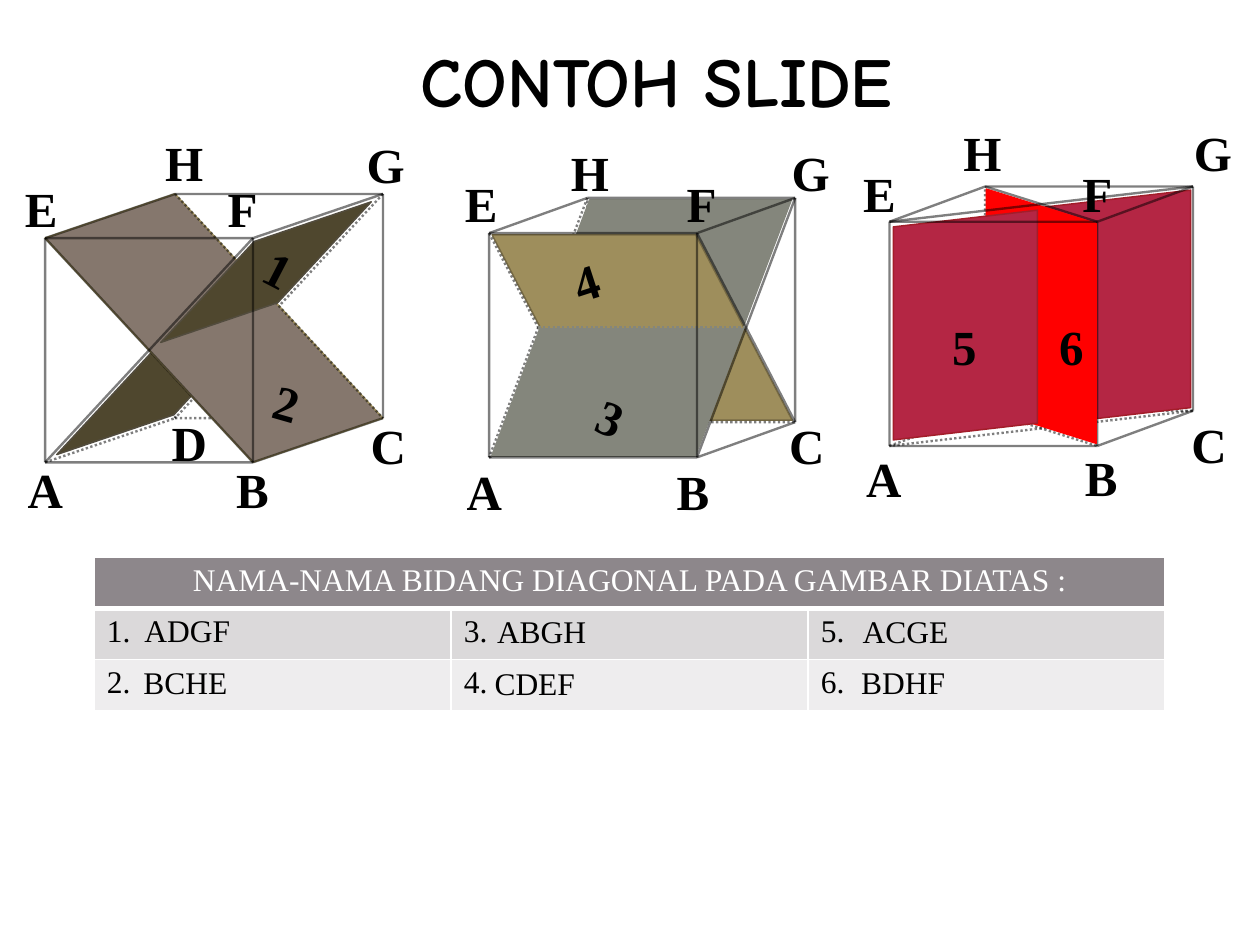
import pptx
import pptx.dml.color
import pptx.enum.dml
import pptx.enum.text
import pptx.oxml
import pptx.oxml.ns
import pptx.util
from pptx.util import Cm

SERIF = "Times New Roman"
FRONT_W, FRONT_H = 4.19, 4.52


def rgb(value):
    """Return the colour of a hex string."""
    return pptx.dml.color.RGBColor.from_string(value)


def style(p, size, color="000000", font=SERIF, bold=False, center=False):
    """Set the font and alignment of a paragraph."""
    p.font.name, p.font.size, p.font.bold = font, pptx.util.Pt(size), bold
    p.font.color.rgb = rgb(color)
    if center:
        p.alignment = pptx.enum.text.PP_ALIGN.CENTER


def text(s, box, words, size, wrap=True, **kw):
    """Add a text box of one paragraph."""
    sp = s.shapes.add_textbox(*map(Cm, box))
    tf = sp.text_frame
    tf.word_wrap = wrap
    tf.text = words
    style(tf.paragraphs[0], size, **kw)
    return sp


def label(s, x, y, words, turn=0):
    """Add a bold letter or number centred on a point."""
    sp = text(s, (x - 0.55, y - 0.66, 1.1, 1.32), words, 28, wrap=False,
              bold=True, center=True)
    sp.rotation = turn


def edge(s, points, name, color=None):
    """Join two named points; a final dot in the name makes the line dotted."""
    ends = [Cm(v) for key in name[:2] for v in points[key]]
    sp = s.shapes.add_connector(pptx.enum.shapes.MSO_CONNECTOR.STRAIGHT, *ends)
    sp.line.width = pptx.util.Pt(1.35)
    sp.line.color.rgb = rgb(color or "000000")
    if name.endswith("."):
        sp.line.dash_style = pptx.enum.dml.MSO_LINE.ROUND_DOT
    pr = sp._element.spPr
    if color is None:
        clr = pr.find(".//" + pptx.oxml.ns.qn("a:srgbClr"))
        clr.append(pptx.oxml.parse_xml(
            f'<a:alpha {pptx.oxml.ns.nsdecls("a")} val="50000"/>'))
    pr.append(pptx.oxml.parse_xml(f'<a:effectLst {pptx.oxml.ns.nsdecls("a")}/>'))


def plane(s, points, name, fill, line, scale):
    """Fill the polygon of named points, shrunk towards its centre."""
    corners = [points[key] for key in name]
    cx, cy = (sum(axis) / len(corners) for axis in zip(*corners))
    dots = [(Cm(cx + (x - cx) * scale), Cm(cy + (y - cy) * scale)) for x, y in corners]
    builder = s.shapes.build_freeform(*dots[0], scale=1.0)
    builder.add_line_segments(dots[1:], close=True)
    sp = builder.convert_to_shape()
    sp.shadow.inherit = False
    sp.fill.solid()
    sp.fill.fore_color.rgb = rgb(fill)
    sp.line.color.rgb = rgb(line)
    sp.line.width = pptx.util.Pt(0.85)


def cube(s, box, centres, parts, letters, numbers):
    """Draw a cube ABCD.EFGH in its box, parts listed from back to front."""
    left, top, w, h = box
    dx, dy = w - FRONT_W, h - FRONT_H
    points = {}
    for front, back, x, y in (("A", "D", 0, 1), ("B", "C", 1, 1),
                              ("E", "H", 0, 0), ("F", "G", 1, 0)):
        px, py = left + x * FRONT_W, top + dy + y * FRONT_H
        points[front], points[back] = (px, py), (px + dx, py - dy)
    for key, (a, b) in centres.items():
        points[key] = tuple((m + n) / 2 for m, n in zip(points[a], points[b]))
    for part in parts:
        if isinstance(part, str):
            edge(s, points, part)
        elif len(part) == 2:
            edge(s, points, *part)
        else:
            plane(s, points, *part)
    for key, (x, y) in letters.items():
        label(s, points[key][0] + x, points[key][1] + y, key)
    for words, x, y, turn in numbers:
        label(s, left + x, top + y, words, turn)


def border(cell, side, width):
    """Draw one white border of a table cell."""
    cell._tc.get_or_add_tcPr().append(pptx.oxml.parse_xml(
        f'<a:ln{side} {pptx.oxml.ns.nsdecls("a")} w="{int(pptx.util.Pt(width))}">'
        f'<a:solidFill><a:srgbClr val="FFFFFF"/></a:solidFill></a:ln{side}>'))


def answers(s, box):
    """Add the table of plane names and the answers over it."""
    left, top, w, h = box
    rows = [["NAMA-NAMA BIDANG DIAGONAL PADA GAMBAR DIATAS :", "", ""],
            ["1.  ADGF", "3.", "5."], ["2.", "4.", "6."]]
    fills = ["8D878B", "DBD9DA", "EEEDEE"]
    table = s.shapes.add_table(3, 3, *map(Cm, box)).table
    for i, row in enumerate(rows):
        table.rows[i].height = Cm(h / 3)
        for j, words in enumerate(row):
            table.columns[j].width = Cm(w / 3)
            cell = table.cell(i, j)
            cell.text = words
            style(cell.text_frame.paragraphs[0], 18,
                  "000000" if i else "FFFFFF", center=not i)
            for side in "LRTB":
                border(cell, side, 3 if (i, side) in ((0, "B"), (1, "T")) else 1)
            cell.fill.solid()
            cell.fill.fore_color.rgb = rgb(fills[i])
    table.cell(0, 0).merge(table.cell(0, 2))
    for words, x, y in (("BCHE", 0.74, 2.01), ("ABGH", 7.87, 0.99), ("CDEF", 7.82, 2.03),
                        ("ACGE", 15.24, 0.99), ("BDHF", 15.21, 2.01)):
        text(s, (left + x, top + y, 4.88, 1.02), words, 18)


def main():
    """Build the slide and save it."""
    prs = pptx.Presentation()
    prs.slide_width, prs.slide_height = Cm(25.4), Cm(19.05)
    s = prs.slides.add_slide(prs.slide_layouts[6])
    text(s, (4.45, 0.64, 17.58, 1.96), "CONTOH SLIDE", 40, font="Comic Neue",
         bold=True, center=True)
    answers(s, (1.9, 11.23, 21.59, 3.1))

    olive, grey, ruby = ("4F472E", "524C3E"), ("84867C", "84867C"), ("B42644", "A31D2A")
    cube(s, (0.91, 3.91, 6.81, 5.41), {"P": "AF", "Q": "DG"},
         ["DH.", "DC.", ("APQD", *olive, 0.9), "GD.", ("HCBE", "85776D", "9E8E5C", 1),
          "EH", "AB", "AE", "AD.", "BC", "FG", "CG", "HG", "EF", "HC.", "EB",
          ("FPQG", *olive, 0.9), "FB", "FA"],
         {"A": (-0.05, 0.48), "B": (-0.04, 0.48), "C": (0.05, 0.48), "D": (0.23, 0.43),
          "E": (-0.11, -0.66), "F": (-0.21, -0.66), "G": (-0.03, -0.66), "H": (0.1, -0.71)},
         [("1", 4.74, 1.45, 27.4), ("2", 4.89, 4.14, 16)])
    cube(s, (9.86, 3.99, 6.17, 5.23), {"P": "AH", "Q": "BG"},
         ["DH.", "AD.", ("HGQP", *grey, 0.97), "HA.", ("EFCD", "9E8E5C", "756944", 0.98),
          "DC.", "AE", "BC", "CG", "HG", "EF", "ED.", "FC", ("PQ.", "84867C"), "FG",
          "EH", ("PQBA", *grey, 0.98), "FB", "GB", "AB"],
         {"A": (-0.15, 0.61), "B": (-0.11, 0.61), "C": (0.18, 0.41), "E": (-0.19, -0.66),
          "F": (0.09, -0.66), "G": (0.23, -0.58), "H": (-0.03, -0.58)},
         [("4", 1.93, 1.62, -18), ("3", 2.48, 4.37, 22)])
    cube(s, (17.93, 3.76, 6.12, 5.23), {"P": "EG", "Q": "AC"},
         ["DC.", ("PGCQ", *ruby, 0.97), "CA.", "AB", "AE", "BC", "CG", "HG", "FH", "FG",
          "EH", "DB.", "FB", "AD.", "DH.", ("HFBD", "FF0000", "FF0000", 0.98), "EG",
          ("EPQA", *ruby, 0.95), "EF"],
         {"A": (-0.17, 0.58), "B": (0.05, 0.56), "C": (0.27, 0.61), "E": (-0.23, -0.64),
          "F": (0, -0.64), "G": (0.32, -0.76), "H": (-0.14, -0.76)},
         [("5", 1.51, 3.15, 0), ("6", 3.67, 3.15, 0)])
    prs.save("out.pptx")


if __name__ == "__main__":
    main()
